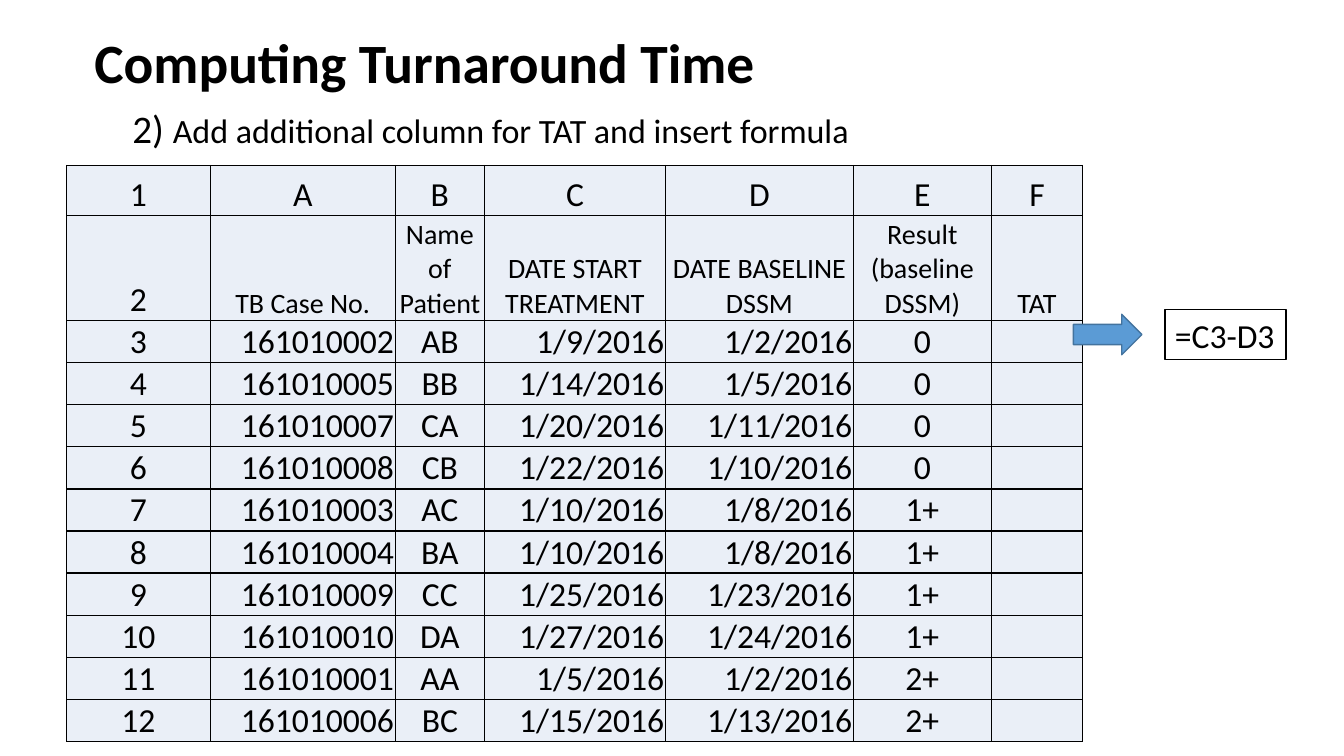
from dataclasses import dataclass

from lxml.etree import SubElement as Sub
from pptx import Presentation as Deck
from pptx.dml.color import RGBColor as Rgb
from pptx.enum.shapes import MSO_SHAPE as Kind
from pptx.enum.text import MSO_ANCHOR as Anchor, PP_ALIGN as Align
from pptx.oxml.ns import qn
from pptx.util import Cm, Pt


@dataclass(frozen=True)
class Theme:
    face: str = "Calibri"
    ink: str = "000000"
    cell: str = "EAEFF7"
    arrow: str = "5B9BD5"
    edge: str = "43739E"
    title: float = 39.6
    step: float = 27.9
    task: float = 24.3
    body: float = 24
    head: float = 20


def apply(item, form):
    for name, value in form.items():
        setattr(item, name, value)


class Page:
    def __init__(self, slide, theme):
        self.slide = slide
        self.theme = theme

    def words(self, para, text, size, bold=False):
        run = para.add_run()
        run.text = text
        apply(run.font, {"name": self.theme.face, "size": Pt(size), "bold": bold})
        run.font.color.rgb = Rgb.from_string(self.theme.ink)

    def outline(self, shape, color, width):
        shape.line.color.rgb = Rgb.from_string(color)
        shape.line.width = Pt(width)

    def box(self, place, form):
        shape = self.slide.shapes.add_textbox(*map(Cm, place))
        apply(shape.text_frame, form)
        return shape

    def heading(self, place, title, step, task):
        frame = self.box(place, {"word_wrap": True, "vertical_anchor": Anchor.MIDDLE}).text_frame
        top, sub = frame.paragraphs[0], frame.add_paragraph()
        apply(top, {"line_spacing": 0.9})
        apply(sub, {"line_spacing": 0.9, "space_before": Pt(10)})
        sub._p.get_or_add_pPr().set("marL", str(Cm(0.96)))
        self.words(top, title, self.theme.title, True)
        self.words(sub, step, self.theme.step)
        self.words(sub, task, self.theme.task)

    def label(self, place, text):
        shape = self.box(place, {"word_wrap": False})
        self.outline(shape, self.theme.ink, 0.75)
        self.words(shape.text_frame.paragraphs[0], text, self.theme.body)

    def arrow(self, place):
        shape = self.slide.shapes.add_shape(Kind.RIGHT_ARROW, *map(Cm, place))
        shape.shadow.inherit = False
        shape.fill.solid()
        shape.fill.fore_color.rgb = Rgb.from_string(self.theme.arrow)
        self.outline(shape, self.theme.edge, 1)

    def border(self, cell):
        props = cell._tc.get_or_add_tcPr()
        for side in ("lnL", "lnR", "lnT", "lnB"):
            line = Sub(props, qn(f"a:{side}"), w=str(Pt(1)))
            fill = Sub(line, qn("a:solidFill"))
            Sub(fill, qn("a:srgbClr"), val=self.theme.ink)

    def cell(self, cell, text, size, align):
        apply(cell, {
            "vertical_anchor": Anchor.BOTTOM,
            "margin_left": Cm(0.03), "margin_right": Cm(0.03),
            "margin_top": Cm(0.03), "margin_bottom": Cm(0),
        })
        self.border(cell)
        cell.fill.solid()
        cell.fill.fore_color.rgb = Rgb.from_string(self.theme.cell)
        if text:
            para = cell.text_frame.paragraphs[0]
            para.alignment = align
            self.words(para, text, size)

    def table(self, left, top, widths, heights, rows):
        spot = map(Cm, (left, top, sum(widths), sum(heights)))
        grid = self.slide.shapes.add_table(len(rows), len(widths), *spot).table
        apply(grid, {"first_row": False, "horz_banding": False})
        for col, width in zip(grid.columns, widths):
            col.width = Cm(width)
        for row, height in zip(grid.rows, heights):
            row.height = Cm(height)
        for r, row in enumerate(rows):
            for c, text in enumerate(row):
                size = self.theme.head if r == 1 and c else self.theme.body
                align = Align.RIGHT if r > 1 and c in (1, 3, 4) else Align.CENTER
                self.cell(grid.cell(r, c), text, size, align)


CASES = [
    ("161010002", "AB", "1/9/2016", "1/2/2016", "0"),
    ("161010005", "BB", "1/14/2016", "1/5/2016", "0"),
    ("161010007", "CA", "1/20/2016", "1/11/2016", "0"),
    ("161010008", "CB", "1/22/2016", "1/10/2016", "0"),
    ("161010003", "AC", "1/10/2016", "1/8/2016", "1+"),
    ("161010004", "BA", "1/10/2016", "1/8/2016", "1+"),
    ("161010009", "CC", "1/25/2016", "1/23/2016", "1+"),
    ("161010010", "DA", "1/27/2016", "1/24/2016", "1+"),
    ("161010001", "AA", "1/5/2016", "1/2/2016", "2+"),
    ("161010006", "BC", "1/15/2016", "1/13/2016", "2+"),
]
HEADS = ("TB Case No.", "Name of Patient", "DATE START TREATMENT",
         "DATE BASELINE DSSM", "Result (baseline DSSM)", "TAT")


def main():
    deck = Deck()
    apply(deck, {"slide_width": Cm(33.87), "slide_height": Cm(19.05)})
    page = Page(deck.slides.add_slide(deck.slide_layouts[6]), Theme())
    page.heading((2.13, 0.91, 29.21, 2.9), "Computing Turnaround Time",
                 "2) ", "Add additional column for TAT and insert formula")
    lines = ["ABCDEF", HEADS] + [(*case, "") for case in CASES]
    rows = [(str(n), *line) for n, line in enumerate(lines, 1)]
    widths = (3.62, 4.66, 2.25, 4.56, 4.74, 3.47, 2.31)
    heights = [1.27, 2.64] + [1.06] * len(CASES)
    page.table(1.68, 4.17, widths, heights, rows)
    page.label((29.36, 7.8, 3.05, 1.27), "=C3-D3")
    page.arrow((27.05, 7.92, 1.73, 1.02))
    deck.save("out.pptx")


if __name__ == "__main__":
    main()
